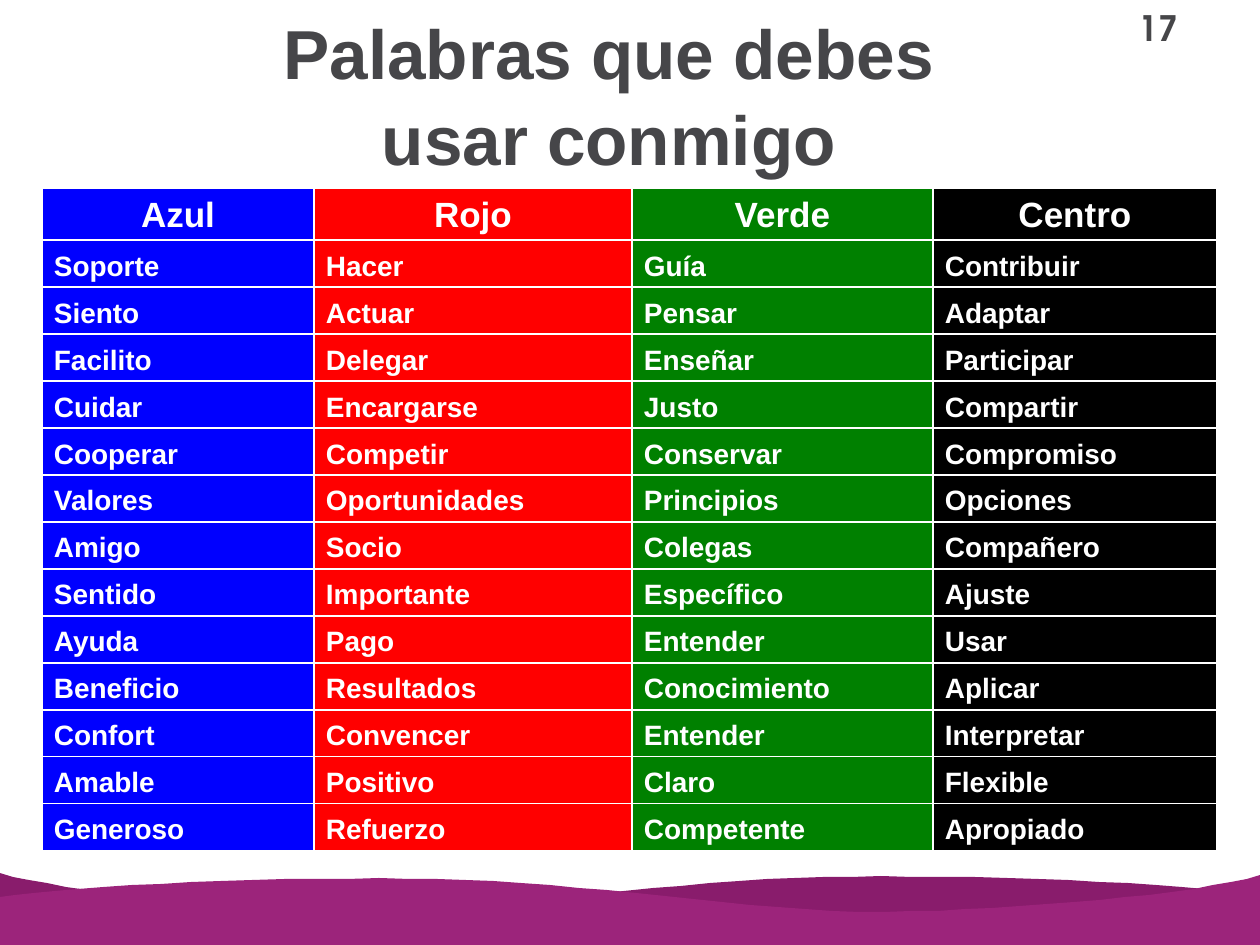
"""Builds a slide with a four-column table of words to use with each colour."""
from pptx import Presentation
from pptx.dml.color import RGBColor
from pptx.enum.text import MSO_ANCHOR, MSO_AUTO_SIZE, PP_ALIGN
from pptx.util import Emu, Pt

SCALE = 914400 / 126
CURVE_STEPS = 16
COLUMNS = [
    ("Azul", "0000FF", 272, "Soporte Siento Facilito Cuidar Cooperar Valores Amigo "
     "Sentido Ayuda Beneficio Confort Amable Generoso"),
    ("Rojo", "FF0000", 318, "Hacer Actuar Delegar Encargarse Competir Oportunidades Socio "
     "Importante Pago Resultados Convencer Positivo Refuerzo"),
    ("Verde", "008000", 301, "Guía Pensar Enseñar Justo Conservar Principios Colegas "
     "Específico Entender Conocimiento Entender Claro Competente"),
    ("Centro", "000000", 284, "Contribuir Adaptar Participar Compartir Compromiso Opciones "
     "Compañero Ajuste Usar Aplicar Interpretar Flexible Apropiado"),
]
WAVE = [(1260, 895), (1187, 883), (970, 874), (823, 877), (675, 879),
        (513, 910), (375, 910), (238, 908), (64, 892), (0, 873)]


def px(length):
    return Emu(round(length * SCALE))


def style(paragraph, size, color, name="Arial"):
    font = paragraph.font
    font.name, font.size, font.bold = name, Pt(size), True
    font.color.rgb = RGBColor.from_string(color)


deck = Presentation()
deck.slide_width, deck.slide_height = px(1260), px(945)
page = deck.slides.add_slide(deck.slide_layouts[5])

number_box = page.shapes.add_textbox(px(1126), px(0), px(118), px(55))
number_box.text_frame.word_wrap = True
number_box.text_frame.text = "17"
style(number_box.text_frame.paragraphs[0], 20, "464649", "TeX Gyre Adventor")

mirrored_wave = [(1260 - x, y + 2) for x, y in WAVE]
for controls, color in ((WAVE, "891C6C"), (mirrored_wave, "9C247B")):
    outline = [controls[0]]
    for start in range(0, len(controls) - 1, 3):
        a, b, c, d = controls[start:start + 4]
        for step in range(1, CURVE_STEPS + 1):
            t = step / CURVE_STEPS
            u = 1 - t
            outline.append(tuple(
                u**3 * a[i] + 3 * u * u * t * b[i] + 3 * u * t * t * c[i] + t**3 * d[i]
                for i in range(2)))
    outline += [(controls[-1][0], 945), (controls[0][0], 945)]
    builder = page.shapes.build_freeform(*outline[0], scale=SCALE)
    builder.add_line_segments(outline[1:], close=True)
    wave = builder.convert_to_shape()
    wave.shadow.inherit = False
    wave.fill.solid()
    wave.fill.fore_color.rgb = RGBColor.from_string(color)
    wave.line.fill.background()

title = page.shapes.title
title.left, title.top, title.width, title.height = px(66), px(50), px(1086), px(86)
title_frame = title.text_frame
title_frame.text = "Palabras que debes\vusar conmigo"
title_frame.auto_size = MSO_AUTO_SIZE.NONE
title_frame.vertical_anchor = MSO_ANCHOR.MIDDLE
heading = title_frame.paragraphs[0]
heading.alignment = PP_ALIGN.CENTER
heading.line_spacing = 1.04
style(heading, 39.6, "464649")

table_width = sum(column[2] for column in COLUMNS)
table = page.shapes.add_table(14, 4, px(42), px(188), px(table_width), px(661)).table
for index, row in enumerate(table.rows):
    row.height = px(47 if index else 50)
for column_index, (name, color, width, words) in enumerate(COLUMNS):
    table.columns[column_index].width = px(width)
    for row_index, word in enumerate([name] + words.split()):
        cell = table.cell(row_index, column_index)
        cell.text = word
        cell.fill.solid()
        cell.fill.fore_color.rgb = RGBColor.from_string(color)
        cell.vertical_anchor = MSO_ANCHOR.BOTTOM
        cell.margin_left = cell.margin_right = px(12)
        cell.margin_top = cell.margin_bottom = px(5)
        para = cell.text_frame.paragraphs[0]
        para.alignment = PP_ALIGN.LEFT if row_index else PP_ALIGN.CENTER
        style(para, 16 if row_index else 20, "FFFFFF")

deck.save("out.pptx")
